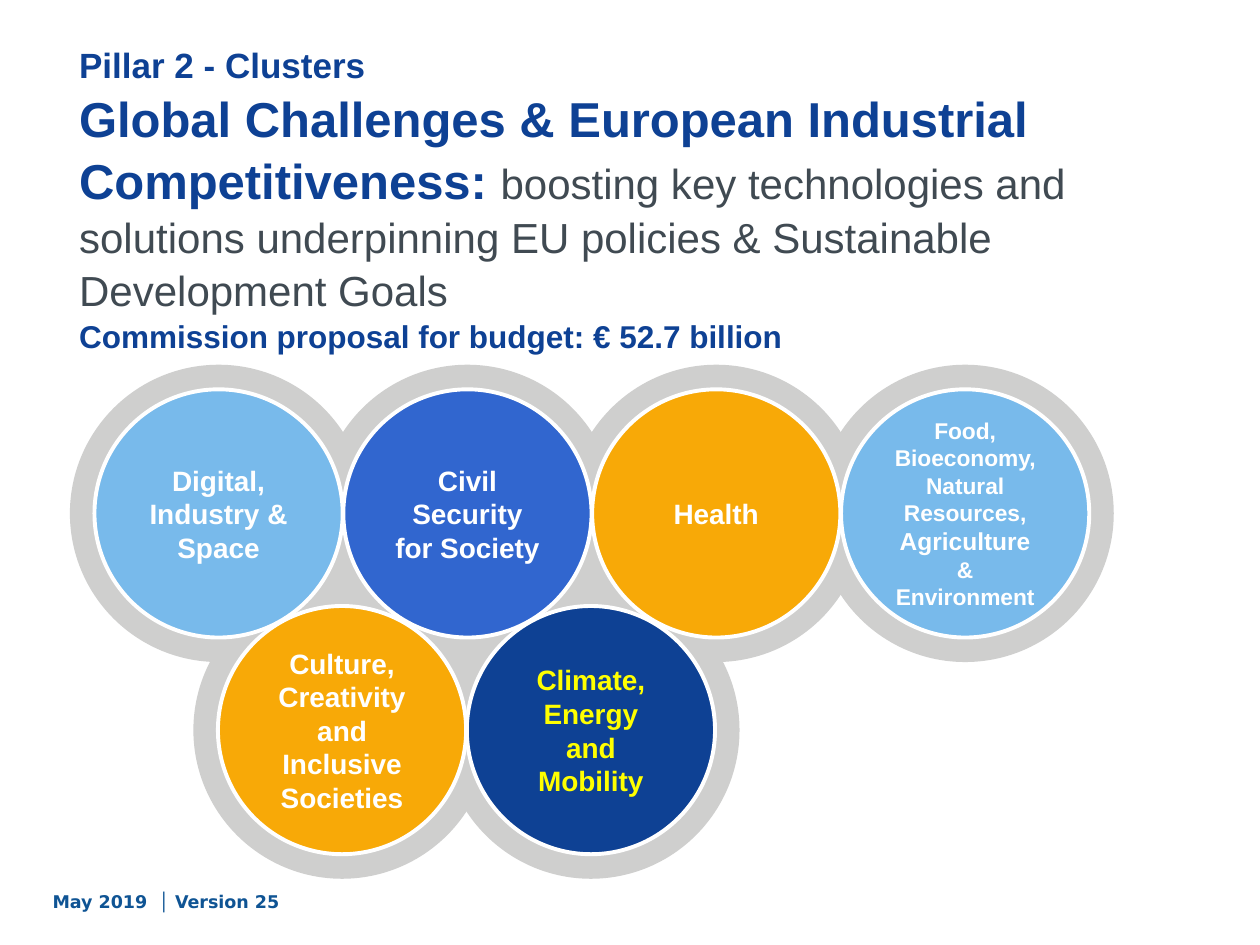
from dataclasses import dataclass

from lxml.etree import SubElement
from pptx import Presentation
from pptx.dml.color import RGBColor
from pptx.enum.shapes import MSO_SHAPE
from pptx.enum.text import MSO_ANCHOR, PP_ALIGN
from pptx.oxml.ns import qn
from pptx.util import Inches, Pt


@dataclass(frozen=True)
class Theme:
    font: str = "Arial"
    footer_font: str = "DejaVu Sans"
    navy: str = "0E4194"
    blue: str = "3166CF"
    sky: str = "78BAEB"
    orange: str = "F8A907"
    yellow: str = "FFFF00"
    white: str = "FFFFFF"
    halo: str = "CFCFCE"
    grey: str = "404A52"
    footer: str = "0F5494"
    kicker_size: int = 20
    headline_size: int = 28
    body_size: int = 24
    budget_size: int = 18
    label_size: int = 16
    dense_size: int = 13
    dense_large_size: int = 14
    footer_size: int = 10
    outline: float = 2.25


def add_run(p, text, *, size, color, font, bold=True):
    r = p.add_run()
    r.text = text
    r.font.name = font
    r.font.size = Pt(size)
    r.font.bold = bold
    r.font.color.rgb = RGBColor.from_string(color)


class Deck:
    def __init__(self, theme):
        self.t = theme
        self.prs = Presentation()
        self.prs.slide_width, self.prs.slide_height = Inches(10), Inches(7.5)
        self.s = self.prs.slides.add_slide(self.prs.slide_layouts[6])

    def text_box(self, x, y, w, h):
        box = self.s.shapes.add_textbox(Inches(x), Inches(y), Inches(w), Inches(h))
        box.text_frame.word_wrap = True
        return box.text_frame.paragraphs[0]

    def title(self, lines):
        p = self.text_box(0.53, 0.28, 8.4, 2.5)
        p.line_spacing = 1.05
        for i, line in enumerate(lines):
            if i:
                p.add_line_break()
            for text, style in line:
                add_run(p, text, font=self.t.font, **style)

    def circle(self, x, y, size, fill, outlined=False):
        sp = self.s.shapes.add_shape(
            MSO_SHAPE.OVAL, Inches(x), Inches(y), Inches(size), Inches(size))
        sp.shadow.inherit = False
        sp.fill.solid()
        sp.fill.fore_color.rgb = RGBColor.from_string(fill)
        if outlined:
            sp.line.color.rgb = RGBColor.from_string(self.t.white)
            sp.line.width = Pt(self.t.outline)
        else:
            sp.line.fill.background()
        return sp

    def cluster(self, x, y, size, fill, color, runs):
        tf = self.circle(x, y, size, fill, outlined=True).text_frame
        tf.word_wrap = True
        tf.vertical_anchor = MSO_ANCHOR.MIDDLE
        p = tf.paragraphs[0]
        p.alignment = PP_ALIGN.CENTER
        for text, points in runs:
            add_run(p, text, size=points, color=color, font=self.t.font)

    def footer(self, text, tab):
        p = self.text_box(0.32, 7.02, 2.63, 0.27)
        tabs = SubElement(p._p.get_or_add_pPr(), qn("a:tabLst"))
        SubElement(tabs, qn("a:tab"), pos=str(Inches(tab)), algn="l")
        add_run(p, text, size=self.t.footer_size, color=self.t.footer,
                font=self.t.footer_font)


def main():
    t = Theme()
    deck = Deck(t)

    # Footer
    deck.footer("May 2019\t│ Version 25", tab=0.84)

    # Cluster rows: left edge, top edge, then fill, text colour and label runs
    pitch, disc, halo = 1.975, 1.97, 2.36
    rows = [
        (0.75, 3.09, [
            (t.sky, t.white, [("Digital, Industry & Space", t.label_size)]),
            (t.blue, t.white, [("Civil Security for Society", t.label_size)]),
            (t.orange, t.white, [("Health", t.label_size)]),
            (t.sky, t.white, [
                ("Food, Bioeconomy, Natural Resources, ", t.dense_size),
                ("Agriculture", t.dense_large_size),
                (" & Environment", t.dense_size)]),
        ]),
        (1.73, 4.81, [
            (t.orange, t.white,
             [("Culture, Creativity and Inclusive Societies", t.label_size)]),
            (t.navy, t.yellow, [("Climate, Energy and Mobility", t.label_size)]),
        ]),
    ]
    clusters = [(left + i * pitch, top, item)
                for left, top, items in rows for i, item in enumerate(items)]

    # Grey halos behind all the clusters
    margin = (halo - disc) / 2
    for x, y, _ in clusters:
        deck.circle(x - margin, y - margin, halo, t.halo)

    # Title
    deck.title([
        [("Pillar 2 - Clusters", dict(size=t.kicker_size, color=t.navy))],
        [("Global Challenges & European Industrial Competitiveness: ",
          dict(size=t.headline_size, color=t.navy)),
         ("boosting key technologies and solutions underpinning EU policies "
          "& Sustainable Development Goals",
          dict(size=t.body_size, color=t.grey, bold=False))],
        [("Commission proposal for budget: € 52.7 billion",
          dict(size=t.budget_size, color=t.navy))],
    ])

    # Cluster discs
    for x, y, (fill, color, runs) in clusters:
        deck.cluster(x, y, disc, fill, color, runs)

    deck.prs.save("out.pptx")


if __name__ == "__main__":
    main()
